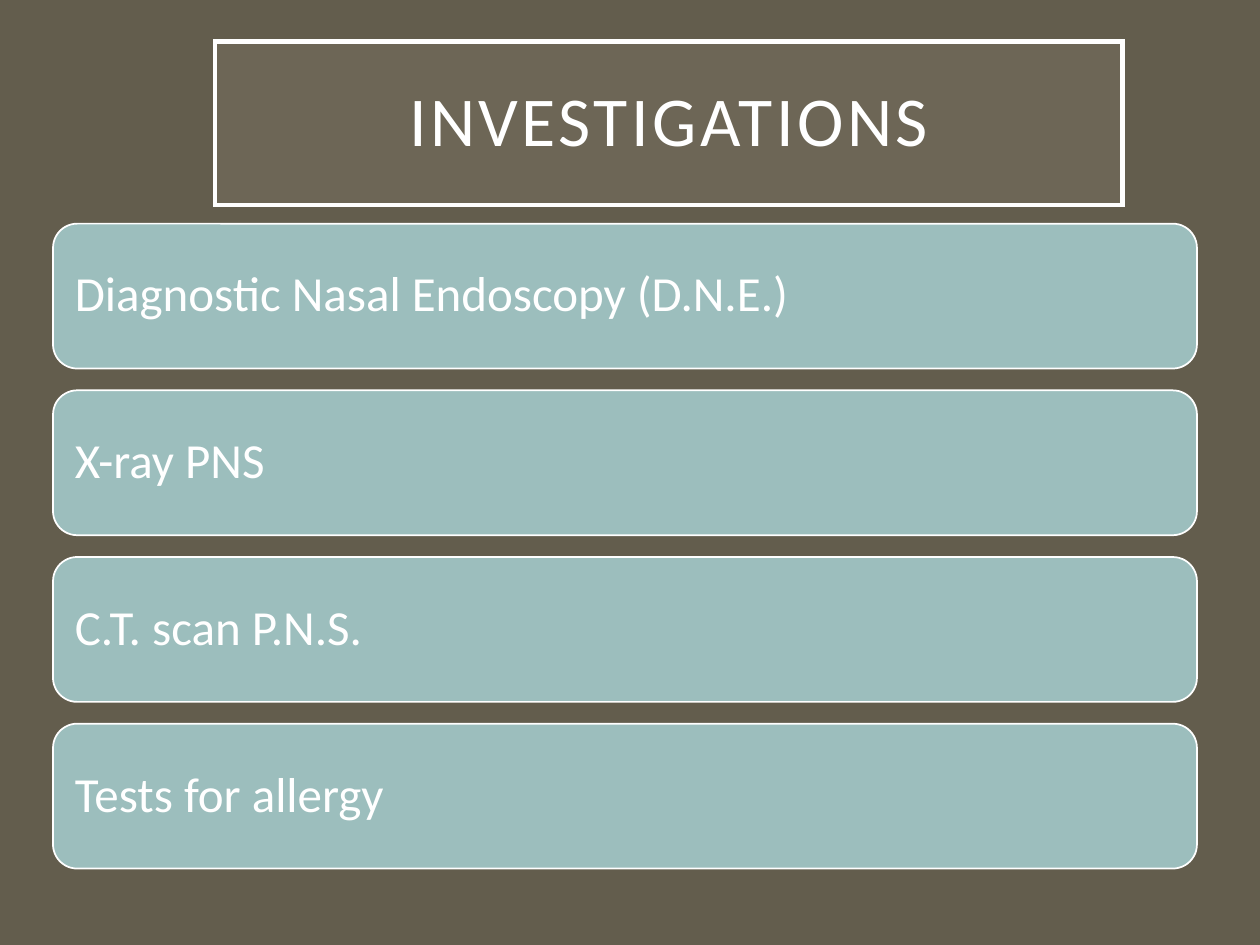
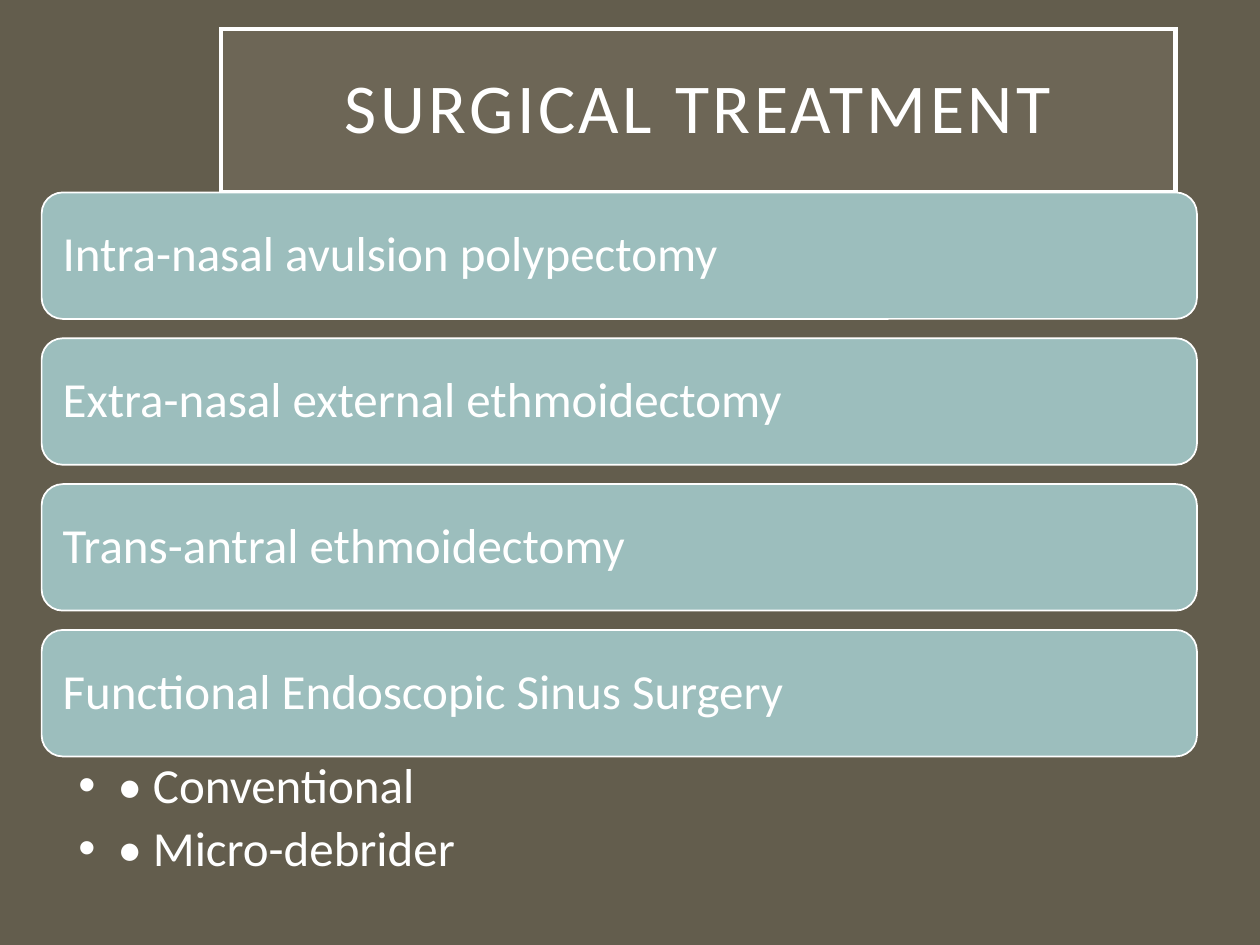
import pptx
import pptx.dml.color
import pptx.enum.shapes
import pptx.enum.text
import pptx.oxml.ns
import pptx.util
from lxml import etree
from pptx.util import Cm

BACKGROUND = "635D4D"
TITLE_FILL = "A7A08E"
CARD_FILL = "9CBEBD"
WHITE = "FFFFFF"
FONT = "Calibri"
BODY_SIZE = 28

SHAPE = pptx.enum.shapes.MSO_SHAPE
ALIGN = pptx.enum.text.PP_ALIGN
ANCHOR = pptx.enum.text.MSO_ANCHOR


def color(hex_string):
    return pptx.dml.color.RGBColor.from_string(hex_string)


def add_xml(parent, tag, **attributes):
    return etree.SubElement(parent, pptx.oxml.ns.qn(tag), attributes)


class Deck:
    """Shared style plus the slide being built; lengths are in centimetres."""

    def __init__(self):
        self.prs = pptx.Presentation()
        self.prs.slide_width, self.prs.slide_height = Cm(25.4), Cm(19.05)
        self.slide = None

    def new_slide(self):
        self.slide = self.prs.slides.add_slide(self.prs.slide_layouts[6])
        fill = self.slide.background.fill
        fill.solid()
        fill.fore_color.rgb = color(BACKGROUND)

    def box(self, kind, at, fill, line_width):
        sp = self.slide.shapes.add_shape(kind, *map(Cm, at))
        sp.shadow.inherit = False
        sp.fill.solid()
        sp.fill.fore_color.rgb = color(fill)
        sp.line.color.rgb = color(WHITE)
        sp.line.width = pptx.util.Pt(line_width)
        return sp

    def set_text(self, sp, lines, size, insets, anchor, align=ALIGN.LEFT, after=0):
        tf = sp.text_frame
        tf.word_wrap = True
        tf.vertical_anchor = anchor
        tf.margin_left, tf.margin_top, tf.margin_right, tf.margin_bottom = map(Cm, insets)
        tf.text = "\n".join(lines)
        for p in tf.paragraphs:
            p.alignment = align
            p.line_spacing = 0.9
            p.space_after = pptx.util.Pt(after)
            font = p.runs[0].font
            font.name = FONT
            font.size = pptx.util.Pt(size)
            font.color.rgb = color(WHITE)
        return tf.paragraphs

    def title(self, text, at):
        sp = self.box(SHAPE.RECTANGLE, at, TITLE_FILL, 2.5)
        # Translucent fill, sharp corners, wide letter spacing
        spPr = sp.element.spPr
        rgb = spPr.find(pptx.oxml.ns.qn("a:solidFill")).find(pptx.oxml.ns.qn("a:srgbClr"))
        add_xml(rgb, "a:alpha", val="15000")
        add_xml(spPr.find(pptx.oxml.ns.qn("a:ln")), "a:miter", lim="800000")
        p = self.set_text(sp, [text], 40, [0.5] * 4, ANCHOR.MIDDLE, ALIGN.CENTER)[0]
        p.runs[0]._r.get_or_add_rPr().set("spc", "200")

    def cards(self, texts, left, top, width, height, pitch):
        for i, text in enumerate(texts):
            at = (left, top + i * pitch, width, height)
            sp = self.box(SHAPE.ROUNDED_RECTANGLE, at, CARD_FILL, 1)
            self.set_text(sp, [text], BODY_SIZE, [0.3] * 4, ANCHOR.MIDDLE, after=9.8)

    def bullets(self, lines, at):
        sp = self.slide.shapes.add_textbox(*map(Cm, at))
        insets = (0.74, 0.1, 0.56, 0.1)
        for p in self.set_text(sp, lines, BODY_SIZE, insets, ANCHOR.TOP, after=5.6):
            p.level = 1
            pPr = p._p.get_or_add_pPr()
            pPr.set("marL", str(Cm(0.79)))
            pPr.set("indent", str(-Cm(0.79)))
            add_xml(pPr, "a:buFont", typeface="Arial")
            add_xml(pPr, "a:buChar", char="•")


def main():
    deck = Deck()

    # Investigations
    deck.new_slide()
    deck.title("INVESTIGATIONS", (4.34, 0.84, 18.29, 3.3))
    deck.cards(
        ["Diagnostic Nasal Endoscopy (D.N.E.)", "X-ray PNS",
         "C.T. scan P.N.S.", "Tests for allergy"],
        left=1.07, top=4.51, width=23.06, height=2.92, pitch=3.36)

    # Surgical treatment
    deck.new_slide()
    deck.title("SURGICAL TREATMENT", (4.45, 0.58, 19.25, 3.3))
    deck.cards(
        ["Intra-nasal avulsion polypectomy", "Extra-nasal external ethmoidectomy",
         "Trans-antral ethmoidectomy", "Functional Endoscopic Sinus Surgery"],
        left=0.84, top=3.88, width=23.29, height=2.55, pitch=2.94)
    deck.bullets(["• Conventional", "• Micro-debrider"], (0.84, 15.24, 23.29, 2.67))

    deck.prs.save("out.pptx")


if __name__ == "__main__":
    main()
